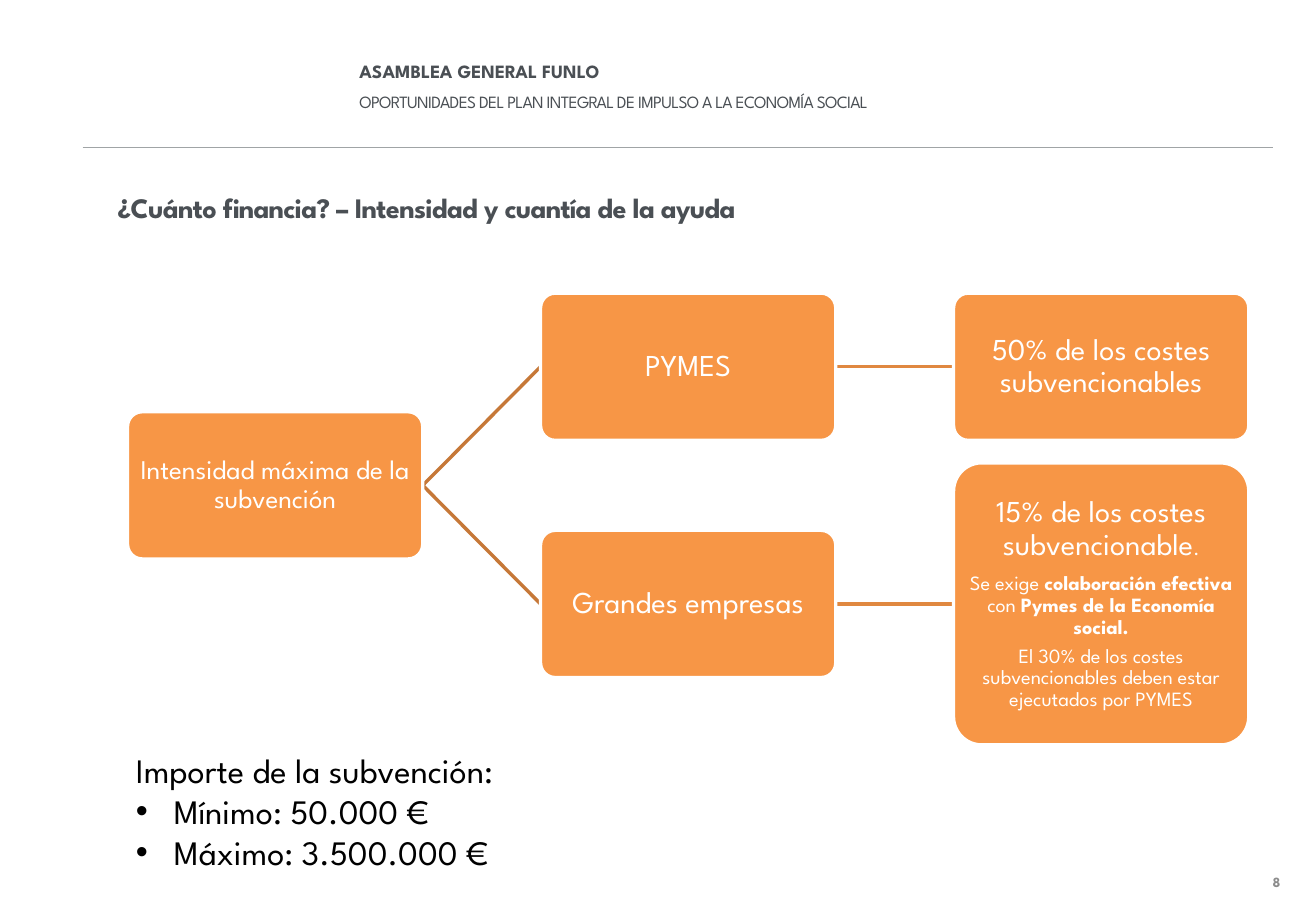
from dataclasses import dataclass

from lxml import etree
from pptx import Presentation
from pptx.dml.color import RGBColor
from pptx.enum import shapes, text
from pptx.oxml import ns
from pptx.util import Pt


@dataclass(frozen=True)
class Theme:
    font: str = "League Spartan"
    white: str = "FFFFFF"
    black: str = "000000"
    heading: str = "4A4F54"
    page: str = "8C8C8C"
    rule: str = "A0A4A6"
    node: str = "F79646"
    first_branch: str = "C67838"
    second_branch: str = "E08840"
    event_size: float = 11.1
    subject_size: float = 10.2
    title_size: float = 16.7
    amount_size: float = 20.3
    page_size: float = 8.3
    root_size: float = 16
    node_size: float = 18
    detail_size: float = 12


THEME = Theme()
EVENT = "ASAMBLEA GENERAL FUNLO"
SUBJECT = "OPORTUNIDADES DEL PLAN INTEGRAL DE IMPULSO A LA ECONOMÍA SOCIAL"
TITLE = "¿Cuánto financia? – Intensidad y cuantía de la ayuda"
PAGE = "8"
AMOUNTS = [
    ("Importe de la subvención:", False),
    ("Mínimo: 50.000 €", True),
    ("Máximo: 3.500.000 €", True),
]

SMALL, LARGE = 87.3, 167.2
NODES = {
    "root": (0, 0.5, SMALL, [(THEME.root_size, [("Intensidad máxima de la subvención", {})])]),
    "pymes": (1, 0, SMALL, [(THEME.node_size, [("PYMES", {})])]),
    "pymes_rate": (2, 0, SMALL, [(THEME.node_size, [("50% de los costes subvencionables", {})])]),
    "grandes": (1, 1, SMALL, [(THEME.node_size, [("Grandes empresas", {})])]),
    "grandes_rate": (2, 1, LARGE, [
        (THEME.node_size, [
            ("15% de los costes subvencionable", {}),
            (".", {"size": Pt(THEME.detail_size)}),
        ]),
        (THEME.detail_size, [
            ("Se exige ", {}),
            ("colaboración efectiva ", {"bold": True}),
            ("con ", {}),
            ("Pymes de la Economía social.", {"bold": True}),
        ]),
        (THEME.detail_size, [
            ("El 30% de los costes subvencionables deben estar ejecutados por PYMES", {}),
        ]),
    ]),
}
BRANCHES = [
    ("root", "pymes", THEME.first_branch),
    ("root", "grandes", THEME.first_branch),
    ("pymes", "pymes_rate", THEME.second_branch),
    ("grandes", "grandes_rate", THEME.second_branch),
]
TREE_LEFT, COLUMN_STEP, NODE_WIDTH = 75.6, 244.8, 175
FIRST_CENTER, ROW_STEP, CORNER = 217.4, 140.6, 0.1


def color(value):
    return RGBColor.from_string(value)


def style(paragraph, size, value, bold=False):
    font = paragraph.font
    font.name, font.size, font.bold = THEME.font, Pt(size), bold
    font.color.rgb = color(value)


def tighten(paragraph):
    for run in paragraph.runs:
        run._r.get_or_add_rPr().set("spc", "-40")


def place(shape, left, top, width, height):
    shape.left, shape.top = Pt(left), Pt(top)
    shape.width, shape.height = Pt(width), Pt(height)


def add_label(slide, words, box, size, value, bold=False, spacing=1.0):
    label = slide.shapes.add_textbox(*map(Pt, box))
    label.text_frame.word_wrap = True
    paragraph = label.text_frame.paragraphs[0]
    paragraph.text = words
    paragraph.line_spacing = spacing
    style(paragraph, size, value, bold)
    return label


def add_line(slide, start, end, value, width):
    line = slide.shapes.add_connector(
        shapes.MSO_CONNECTOR.STRAIGHT, *map(Pt, (*start, *end)))
    line.line.color.rgb = color(value)
    line.line.width = Pt(width)
    etree.SubElement(line._element.spPr, ns.qn("a:effectLst"))


def set_bullet(paragraph, bulleted):
    properties = paragraph._p.get_or_add_pPr()
    indent = Pt(22.5) if bulleted else 0
    properties.set("marL", str(indent))
    properties.set("indent", str(-indent))
    if bulleted:
        etree.SubElement(properties, ns.qn("a:buFont")).set("typeface", "Arial")
        etree.SubElement(properties, ns.qn("a:buChar")).set("char", "•")
    else:
        etree.SubElement(properties, ns.qn("a:buNone"))


def node_position(name):
    column, row, height, _ = NODES[name]
    return TREE_LEFT + column * COLUMN_STEP, FIRST_CENTER + row * ROW_STEP, height


def add_node(slide, name):
    left, center, height = node_position(name)
    shape = slide.shapes.add_shape(
        shapes.MSO_SHAPE.ROUNDED_RECTANGLE,
        *map(Pt, (left, center - height / 2, NODE_WIDTH, height)))
    shape.adjustments[0] = CORNER
    shape.shadow.inherit = False
    shape.fill.solid()
    shape.fill.fore_color.rgb = color(THEME.node)
    shape.line.color.rgb = color(THEME.white)
    shape.line.width = Pt(2)
    frame = shape.text_frame
    frame.word_wrap = True
    frame.vertical_anchor = text.MSO_ANCHOR.MIDDLE
    frame.margin_left = frame.margin_right = frame.margin_top = frame.margin_bottom = Pt(0.8)
    for index, (size, runs) in enumerate(NODES[name][3]):
        paragraph = frame.add_paragraph() if index else frame.paragraphs[0]
        paragraph.alignment = text.PP_ALIGN.CENTER
        paragraph.line_spacing = 0.9
        paragraph.space_after = Pt(round(size * 0.35, 1))
        style(paragraph, size, THEME.white)
        for words, changes in runs:
            run = paragraph.add_run()
            run.text = words
            for attribute, value in changes.items():
                setattr(run.font, attribute, value)


def add_header(slide):
    add_label(slide, EVENT, (205.9, 34.6, 429, 24), THEME.event_size, THEME.heading, True, 0.8)
    subject = add_label(slide, SUBJECT, (205.9, 51.8, 429, 23),
                        THEME.subject_size, THEME.heading, spacing=0.9)
    tighten(subject.text_frame.paragraphs[0])
    add_line(slide, (49, 87.5), (754.6, 87.5), THEME.rule, 0.75)


def fill_title(title):
    place(title, 62.6, 108.7, 670.3, 28)
    frame = title.text_frame
    frame.auto_size = text.MSO_AUTO_SIZE.NONE
    frame.vertical_anchor = text.MSO_ANCHOR.BOTTOM
    frame.text = TITLE
    paragraph = frame.paragraphs[0]
    paragraph.alignment = text.PP_ALIGN.LEFT
    paragraph.line_spacing = 2.0
    style(paragraph, THEME.title_size, THEME.heading, True)
    tighten(paragraph)


def fill_amounts(body):
    place(body, 73.4, 440.6, 640, 77)
    frame = body.text_frame
    frame.auto_size = text.MSO_AUTO_SIZE.NONE
    for index, (words, bulleted) in enumerate(AMOUNTS):
        paragraph = frame.add_paragraph() if index else frame.paragraphs[0]
        paragraph.text = words
        paragraph.space_before = Pt(0)
        set_bullet(paragraph, bulleted)
        style(paragraph, THEME.amount_size, THEME.black)


def main():
    presentation = Presentation()
    presentation.slide_width, presentation.slide_height = Pt(780), Pt(540)
    slide = presentation.slides.add_slide(presentation.slide_layouts[1])
    add_header(slide)
    fill_title(slide.shapes.title)
    fill_amounts(slide.placeholders[1])
    for source, target, value in BRANCHES:
        left, center, _ = node_position(source)
        add_line(slide, (left + NODE_WIDTH, center), node_position(target)[:2], value, 2)
    for name in NODES:
        add_node(slide, name)
    page = add_label(slide, PAGE, (584, 515.5, 182, 14), THEME.page_size, THEME.page, True)
    page.text_frame.vertical_anchor = text.MSO_ANCHOR.MIDDLE
    page.text_frame.paragraphs[0].alignment = text.PP_ALIGN.RIGHT
    presentation.save("out.pptx")


if __name__ == "__main__":
    main()
